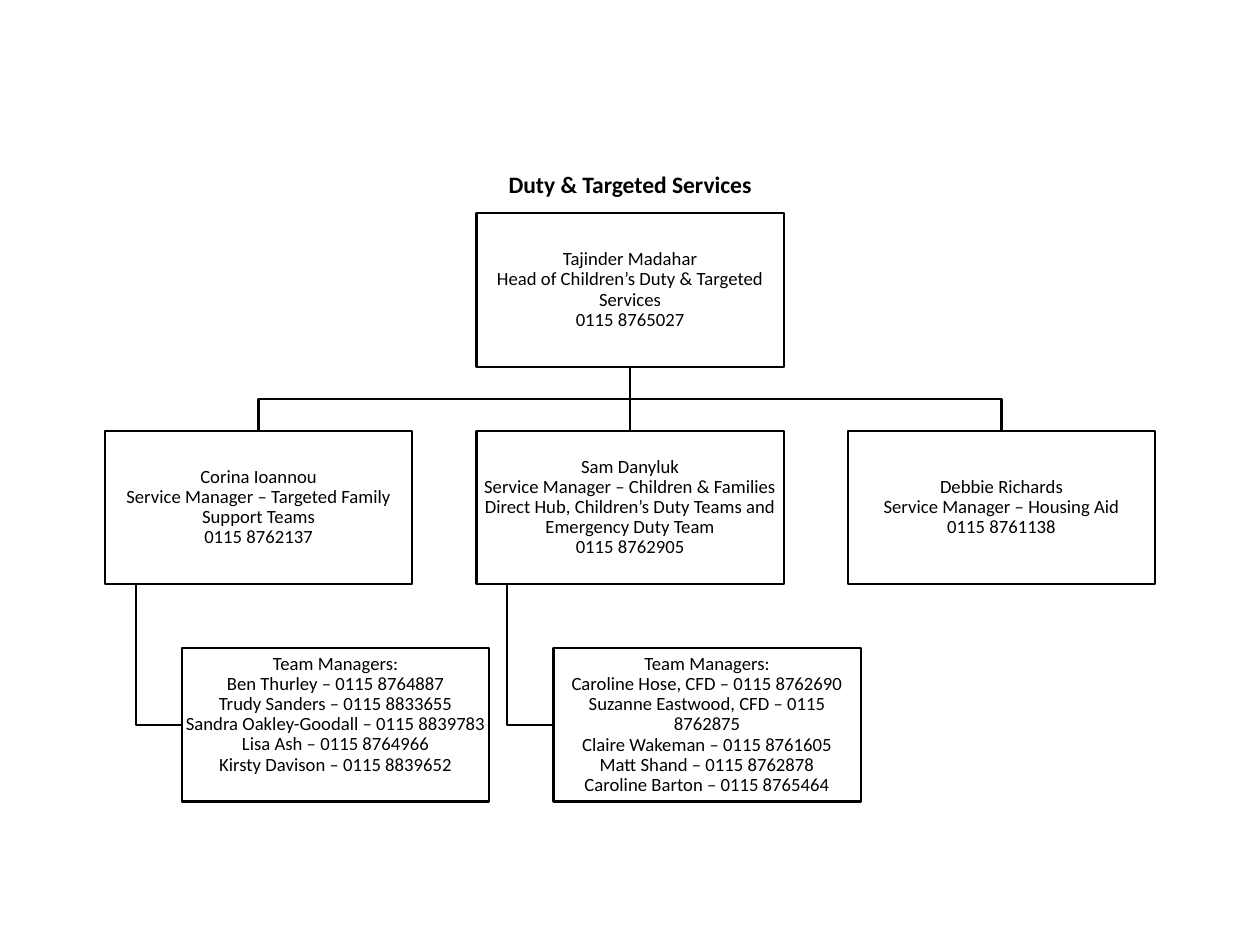
from lxml import etree
from pptx import Presentation
from pptx.dml.color import RGBColor
from pptx.enum import shapes, text
from pptx.oxml.ns import qn
from pptx.util import Pt

BLACK = RGBColor(0, 0, 0)
WHITE = RGBColor(255, 255, 255)
BOX_W, BOX_H = 131.75, 65.8
COL_STEP, ROW_STEP = 159.2, 93.2
TEAM_INDENT, TRUNK_INDENT = 33, 13.2

HEAD = ["Tajinder Madahar", "Head of Children’s Duty & Targeted Services", "0115 8765027"]
BRANCHES = [
    (["Corina Ioannou", "Service Manager – Targeted Family Support Teams", "0115 8762137"],
     ["Team Managers:", "Ben Thurley – 0115 8764887", "Trudy Sanders – 0115 8833655",
      "Sandra Oakley-Goodall – 0115 8839783", "Lisa Ash – 0115 8764966",
      "Kirsty Davison – 0115 8839652"], 9.4),
    (["Sam Danyluk", "Service Manager – Children & Families Direct Hub, "
      "Children’s Duty Teams and Emergency Duty Team", "0115 8762905"],
     ["Team Managers:", "Caroline Hose, CFD – 0115 8762690",
      "Suzanne Eastwood, CFD – 0115 8762875", "Claire Wakeman – 0115 8761605",
      "Matt Shand – 0115 8762878", "Caroline Barton – 0115 8765464"], 0.7),
    (["Debbie Richards", "Service Manager – Housing Aid", "0115 8761138"], [], 0),
]


def format_text(tf, lines, size, bold=False):
    tf.word_wrap = True
    tf.auto_size = text.MSO_AUTO_SIZE.NONE
    tf.vertical_anchor = text.MSO_ANCHOR.MIDDLE
    tf.text = "\n".join(lines)
    for p in tf.paragraphs:
        p.alignment = text.PP_ALIGN.CENTER
        p.line_spacing = 0.9
        p.space_before = p.space_after = Pt(0)
        p.font.name = "Calibri"
        p.font.size = Pt(size)
        p.font.bold = bold
        p.font.color.rgb = BLACK


def format_line(line):
    line.color.rgb = BLACK
    line.width = Pt(1)


def add_title(s, left, top, width, height):
    title = s.shapes.title
    title.left, title.top, title.width, title.height = map(Pt, (left, top, width, height))
    format_text(title.text_frame, ["Duty & Targeted Services"], 10.1, True)


def add_box(s, left, top, lines, bottom_inset=0.7):
    sp = s.shapes.add_shape(shapes.MSO_SHAPE.RECTANGLE,
                            Pt(left), Pt(top), Pt(BOX_W), Pt(BOX_H))
    sp.shadow.inherit = False
    sp.fill.solid()
    sp.fill.fore_color.rgb = WHITE
    format_line(sp.line)
    tf = sp.text_frame
    tf.margin_left = tf.margin_right = tf.margin_top = Pt(0.7)
    tf.margin_bottom = Pt(bottom_inset)
    format_text(tf, lines, 8)
    return sp


def add_elbow(s, points):
    start, *rest = [(Pt(x), Pt(y)) for x, y in points]
    builder = s.shapes.build_freeform(*start)
    builder.add_line_segments(rest, close=False)
    sp = builder.convert_to_shape()
    sp.shadow.inherit = False
    sp.fill.background()
    format_line(sp.line)


def add_straight(s, upper, lower):
    cxn = s.shapes.add_connector(shapes.MSO_CONNECTOR.STRAIGHT, 0, 0, 0, 0)
    cxn.begin_connect(upper, 2)
    cxn.end_connect(lower, 0)
    format_line(cxn.line)
    etree.SubElement(cxn._element.spPr, qn("a:effectLst"))


def add_team(s, left, top, lines, bottom_inset):
    team_top = top + ROW_STEP
    trunk_x, middle = left + TRUNK_INDENT, team_top + BOX_H / 2
    add_elbow(s, [(trunk_x, top + BOX_H), (trunk_x, middle), (left + TEAM_INDENT, middle)])
    add_box(s, left + TEAM_INDENT, team_top, lines, bottom_inset)


def add_org_chart(s, left, top):
    head_left = left + COL_STEP
    head = add_box(s, head_left, top, HEAD)
    head_x, head_bottom = head_left + BOX_W / 2, top + BOX_H
    manager_top = top + ROW_STEP
    bus_y = (head_bottom + manager_top) / 2
    for col, (manager, team, bottom_inset) in enumerate(BRANCHES):
        x = left + col * COL_STEP
        box = add_box(s, x, manager_top, manager)
        if col == 1:
            add_straight(s, head, box)
        else:
            center = x + BOX_W / 2
            add_elbow(s, [(head_x, head_bottom), (head_x, bus_y),
                          (center, bus_y), (center, manager_top)])
        if team:
            add_team(s, x, manager_top, team, bottom_inset)


def main():
    prs = Presentation()
    prs.slide_width, prs.slide_height = Pt(540), Pt(405)
    s = prs.slides.add_slide(prs.slide_layouts[5])
    add_title(s, 37.2, 50.4, 465.8, 59)
    add_org_chart(s, 45, 91.4)
    prs.save("out.pptx")


if __name__ == "__main__":
    main()
